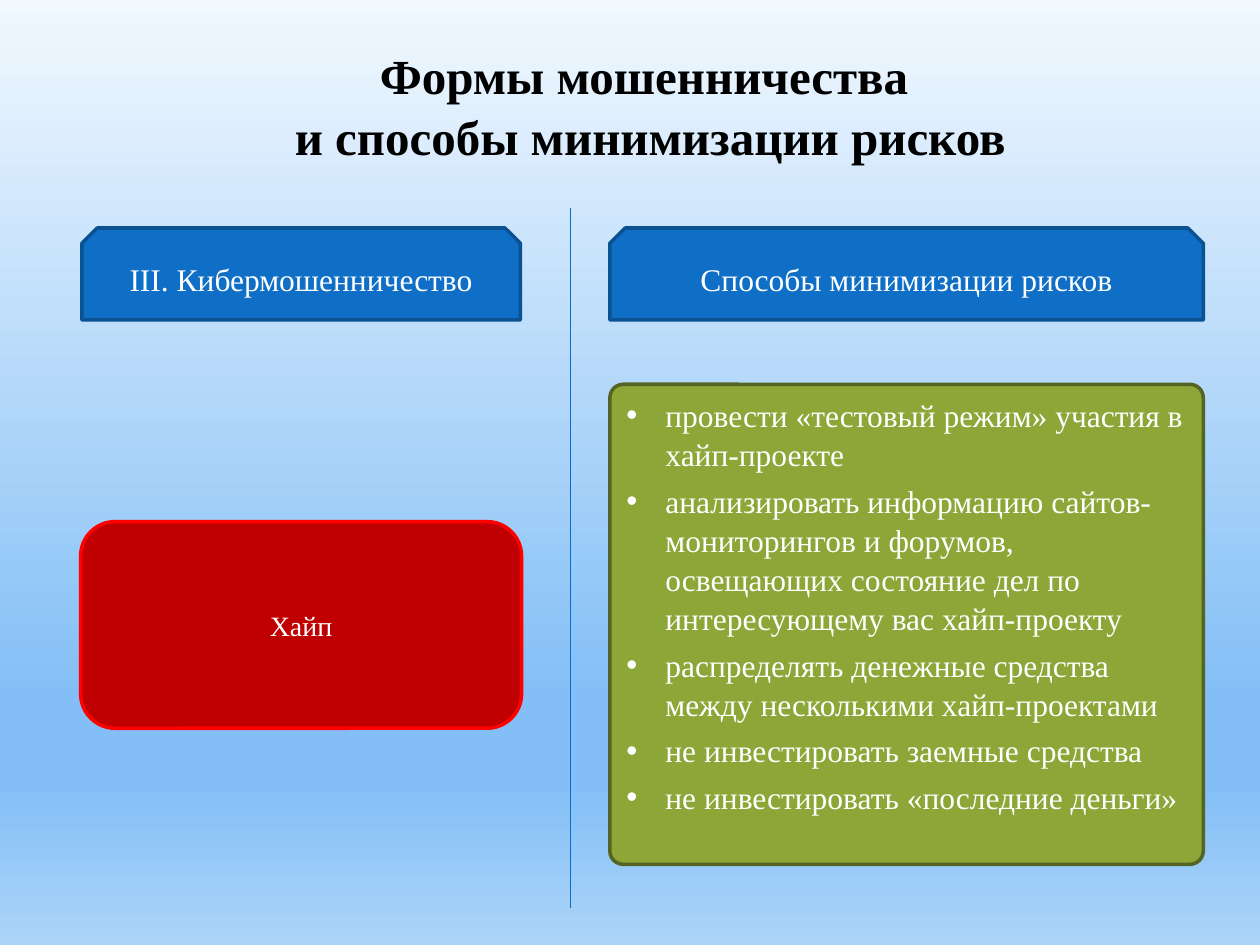
"""Builds a slide on forms of fraud and ways to minimise the risks."""
import lxml.etree
import pptx
import pptx.dml.color
import pptx.enum.shapes
import pptx.enum.text
import pptx.oxml.ns
import pptx.util
from dataclasses import dataclass
from pptx.util import Inches


@dataclass(frozen=True)
class Theme:
    font: str = "Times New Roman"
    title_size: int = 28
    text_size: int = 18
    small_size: int = 16
    black: str = "000000"
    white: str = "FFFFFF"
    blue: str = "0F6FC6"
    dark_blue: str = "0B5292"
    divider: str = "0A6DC6"
    dark_red: str = "C00000"
    red: str = "FF0000"
    green: str = "8CA737"
    dark_green: str = "546422"
    background: tuple = ((0, "F1F8FE"), (74, "83BFF6"), (83, "83BFF6"), (100, "ACD4F9"))


theme = Theme()
qn = pptx.oxml.ns.qn
rgb = pptx.dml.color.RGBColor.from_string
Anchor = pptx.enum.text.MSO_ANCHOR
Align = pptx.enum.text.PP_ALIGN
Preset = pptx.enum.shapes.MSO_SHAPE


def write_text(shape, *lines, size=theme.text_size, color=theme.white, bold=False,
               align=Align.CENTER, anchor=Anchor.MIDDLE, spacing=0, hanging=None):
    frame = shape.text_frame
    frame.word_wrap = True
    frame.auto_size = pptx.enum.text.MSO_AUTO_SIZE.NONE
    frame.vertical_anchor = anchor
    frame.text = "\n".join(lines)
    for paragraph in frame.paragraphs:
        paragraph.alignment = align
        paragraph.line_spacing = 1.04
        paragraph.space_before = paragraph.space_after = pptx.util.Pt(spacing)
        if hanging:
            properties = paragraph._p.get_or_add_pPr()
            properties.set("marL", str(hanging))
            properties.set("indent", str(-hanging))
        for run in paragraph.runs:
            run.font.name = theme.font
            run.font.size = pptx.util.Pt(size)
            run.font.bold = bold
            run.font.color.rgb = rgb(color)


def paint(shape, fill, line):
    shape.fill.solid()
    shape.fill.fore_color.rgb = rgb(fill)
    shape.line.color.rgb = rgb(line)
    shape.line.width = pptx.util.Pt(2)
    shape.shadow.inherit = False


presentation = pptx.Presentation()
presentation.slide_width, presentation.slide_height = Inches(10), Inches(7.5)
slide = presentation.slides.add_slide(presentation.slide_layouts[1])

background = slide.background.fill
background.gradient()
background.gradient_angle = 270
stops = next(slide.element.iter(qn("a:gsLst")))
for stop in list(stops):
    stops.remove(stop)
for position, color in theme.background:
    stop = lxml.etree.SubElement(stops, qn("a:gs"), pos=str(position * 1000))
    lxml.etree.SubElement(stop, qn("a:srgbClr"), val=color)

title, advice = slide.placeholders
title.left, title.top, title.width, title.height = map(Inches, (1.41, 0.31, 7.5, 1.04))
write_text(title, "Формы мошенничества \vи способы минимизации рисков",
           size=theme.title_size, color=theme.black, bold=True)

fraud = slide.shapes.add_shape(
    Preset.ROUNDED_RECTANGLE, Inches(0.64), Inches(4.14), Inches(3.5), Inches(1.64))
paint(fraud, theme.dark_red, theme.red)
write_text(fraud, "Хайп", size=theme.small_size)

for left, width, heading in (
    (0.65, 3.48, "III. Кибермошенничество"),
    (4.84, 4.71, "Способы минимизации рисков"),
):
    header = slide.shapes.add_shape(
        Preset.SNIP_2_SAME_RECTANGLE, Inches(left), Inches(1.81), Inches(width), Inches(0.73))
    paint(header, theme.blue, theme.dark_blue)
    write_text(header, heading)

advice.left, advice.top, advice.width, advice.height = map(Inches, (4.84, 3.05, 4.71, 3.81))
geometry = lxml.etree.SubElement(advice.element.spPr, qn("a:prstGeom"), prst="roundRect")
adjustments = lxml.etree.SubElement(geometry, qn("a:avLst"))
lxml.etree.SubElement(adjustments, qn("a:gd"), name="adj", fmla="val 2800")
paint(advice, theme.green, theme.dark_green)
write_text(
    advice,
    "провести «тестовый режим» участия в хайп-проекте",
    "анализировать информацию сайтов-мониторингов и форумов, освещающих состояние дел "
    "по интересующему вас хайп-проекту",
    "распределять денежные средства между несколькими хайп-проектами",
    "не инвестировать заемные средства",
    "не инвестировать «последние деньги»",
    align=Align.LEFT, anchor=Anchor.TOP, spacing=2, hanging=Inches(0.31))

divider = slide.shapes.add_connector(
    pptx.enum.shapes.MSO_CONNECTOR.STRAIGHT,
    Inches(4.53), Inches(1.65), Inches(4.53), Inches(7.21))
divider.line.color.rgb = rgb(theme.divider)
divider.line.width = pptx.util.Pt(0.75)
lxml.etree.SubElement(divider.element.spPr, qn("a:effectLst"))

presentation.save("out.pptx")
